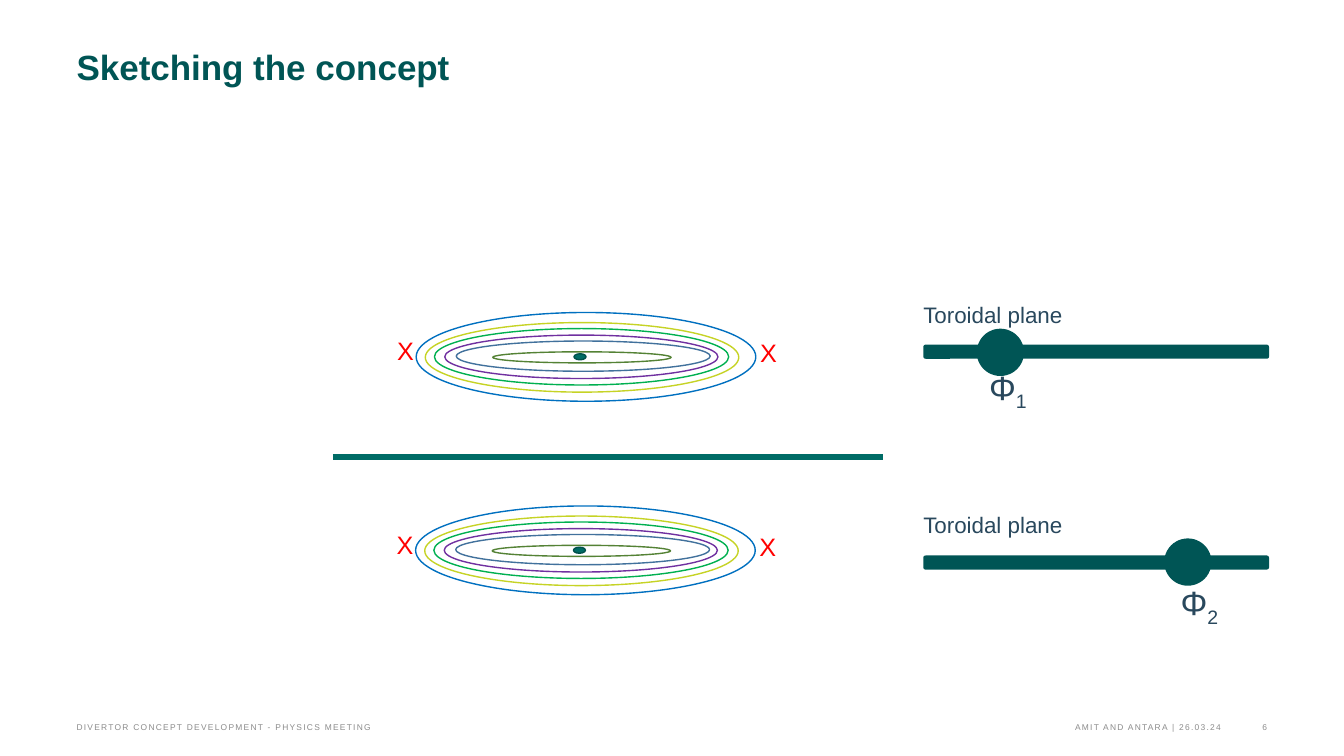
from lxml import etree
from pptx import Presentation
from pptx.dml.color import RGBColor
from pptx.enum.shapes import MSO_CONNECTOR, MSO_SHAPE
from pptx.enum.text import MSO_ANCHOR, PP_ALIGN
from pptx.oxml.ns import qn
from pptx.util import Pt

OVAL, ROUND = MSO_SHAPE.OVAL, MSO_SHAPE.ROUNDED_RECTANGLE
STRAIGHT = MSO_CONNECTOR.STRAIGHT
TOP, BOTTOM = MSO_ANCHOR.TOP, MSO_ANCHOR.BOTTOM
LEFT, CENTER, RIGHT = PP_ALIGN.LEFT, PP_ALIGN.CENTER, PP_ALIGN.RIGHT

DARK = RGBColor(0x00, 0x55, 0x55)
TEAL = RGBColor(0x00, 0x6C, 0x66)
EDGE = RGBColor(0x00, 0x50, 0x4B)
SLATE = RGBColor(0x29, 0x48, 0x5D)
GREY = RGBColor(0x8C, 0x8C, 0x8C)
RED = RGBColor(0xFF, 0x00, 0x00)
LIME = RGBColor(0xC6, 0xD3, 0x25)
GREEN = RGBColor(0x00, 0xB0, 0x50)
PURPLE = RGBColor(0x70, 0x30, 0xA0)
STEEL = RGBColor(0x41, 0x71, 0x9C)
BLUE = RGBColor(0x00, 0x70, 0xC0)
OLIVE = RGBColor(0x54, 0x82, 0x35)

# Left, top, width, height within the outer ring; fill; line
RINGS = [
    (6.5, 7.2, 223.9, 49.7, None, LIME),
    (13, 11.5, 210.2, 40.3, None, GREEN),
    (20.4, 16.2, 195.1, 31, None, PURPLE),
    (28.6, 20.4, 181.4, 21.6, None, STEEL),
    (0, 0, 242.6, 63.4, None, BLUE),
    (54.7, 28.1, 127.4, 7.9, None, OLIVE),
    (112.7, 29.5, 8.6, 4.3, TEAL, EDGE),
]
CROSSES = [(-20.6, 13), (238.5, 14.4)]

HEAD = {"size": Pt(25), "bold": True}
CROSS = {"size": Pt(18)}
LABEL = {"size": Pt(16)}
PHI = {"size": Pt(24)}
FOOT = {"size": Pt(6)}


def style(font, color, form):
    for key, value in {"name": "Arial", **form}.items():
        setattr(font, key, value)
    font.color.rgb = color


def place(shape, box):
    for key, value in zip(("left", "top", "width", "height"), box):
        setattr(shape, key, Pt(value))


def setup(frame, inset=(0, 0), anchor=TOP, wrap=True):
    across, down = map(Pt, inset)
    form = {
        "margin_left": across, "margin_right": across,
        "margin_top": down, "margin_bottom": down,
        "vertical_anchor": anchor, "word_wrap": wrap,
    }
    for key, value in form.items():
        setattr(frame, key, value)


def write(slide, box, text, color, form, align=LEFT, space=None, **frame):
    """Add a text box and return its paragraph."""
    shape = slide.shapes.add_textbox(*map(Pt, box))
    setup(shape.text_frame, **frame)
    para = shape.text_frame.paragraphs[0]
    para.alignment = align
    if space:
        para.line_spacing = Pt(space)
    run = para.add_run()
    run.text = text
    style(run.font, color, form)
    return para


def draw(slide, kind, box, fill=None, line=None):
    shape = slide.shapes.add_shape(kind, *map(Pt, box))
    shape.shadow.inherit = False
    if fill is None:
        shape.fill.background()
    else:
        shape.fill.solid()
        shape.fill.fore_color.rgb = fill
    if line is None:
        shape.line.fill.background()
    else:
        shape.line.color.rgb = line
        shape.line.width = Pt(1)


def add_title(slide, box):
    title = slide.shapes.title
    place(title, box)
    setup(title.text_frame)
    title.text_frame.text = "Sketching the concept"
    para = title.text_frame.paragraphs[0]
    para.alignment = LEFT
    para.line_spacing = Pt(28)
    style(para.runs[0].font, DARK, HEAD)


def add_rings(slide, left, top):
    """Draw nested ellipses with a cross on either side."""
    for x, y, width, height, fill, line in RINGS:
        draw(slide, OVAL, (left + x, top + y, width, height), fill, line)
    for x, y in CROSSES:
        write(slide, (left + x, top + y, 33.8, 28.8), "X", RED, CROSS,
              inset=(7.2, 3.6))


def add_split(slide, left, top, width):
    line = slide.shapes.add_connector(
        STRAIGHT, Pt(left), Pt(top), Pt(left + width), Pt(top))
    line.line.color.rgb = TEAL
    line.line.width = Pt(4.5)
    etree.SubElement(line._element.spPr, qn("a:effectLst"))


def add_plane(slide, left, top, index, dot, phi):
    """Draw a labelled bar with its marker at dot and its angle at phi."""
    draw(slide, ROUND, (left, top + 35.2, 247, 10.1), DARK)
    draw(slide, OVAL, (left + dot[0], top + dot[1], 33.8, 33.8), DARK)
    write(slide, (left, top, 144, 21.6), "Toroidal plane", SLATE, LABEL,
          space=23)
    para = write(slide, (left + phi[0], top + phi[1], 31.7, 23), "Φ", SLATE,
                 PHI, align=CENTER, space=23)
    sub = para.add_run()
    sub.text = index
    style(sub.font, SLATE, PHI)
    sub._r.get_or_add_rPr().set("baseline", "-25000")


def add_footer(slide, top, height):
    parts = [
        (54.7, 479.5, "DIVERTOR CONCEPT DEVELOPMENT - PHYSICS MEETING", LEFT),
        (324.7, 547.3, "AMIT AND ANTARA | 26.03.24", RIGHT),
        (879.1, 25.9, "6", RIGHT),
    ]
    for left, width, text, align in parts:
        para = write(slide, (left, top, width, height), text, GREY, FOOT,
                     align=align, anchor=BOTTOM, wrap=False)
        para.runs[0]._r.get_or_add_rPr().set("spc", "90")


def main():
    deck = Presentation()
    deck.slide_width, deck.slide_height = Pt(960), Pt(540)
    slide = deck.slides.add_slide(deck.slide_layouts[5])
    add_title(slide, (54.7, 34.6, 753.8, 61.9))
    add_rings(slide, 296.9, 361.4)
    add_split(slide, 237.8, 326.2, 393.3)
    add_rings(slide, 297.3, 223.2)
    add_plane(slide, 659.5, 211, "1", (38.2, 23.8), (44.6, 60.5))
    add_plane(slide, 659.5, 361.6, "2", (172.1, 23), (181.4, 64))
    add_footer(slide, 511.2, 11.5)
    deck.save("out.pptx")


if __name__ == "__main__":
    main()
